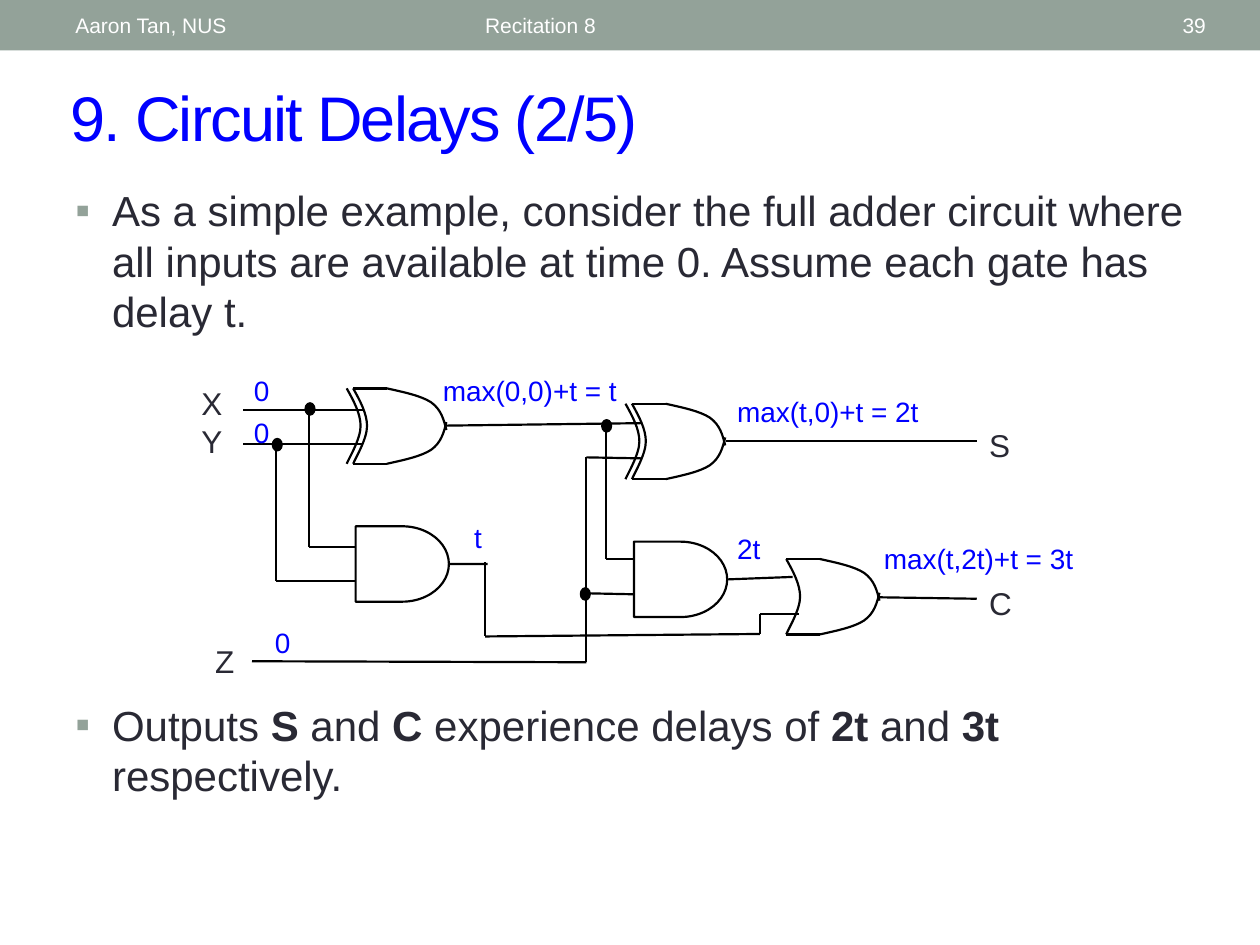
from dataclasses import dataclass
from itertools import pairwise

import pptx
import pptx.enum.shapes
import pptx.enum.text
import pptx.oxml
import pptx.oxml.ns
import pptx.util
from pptx.dml.color import RGBColor
from pptx.util import Cm

SHAPE = pptx.enum.shapes.MSO_SHAPE
ALIGN = pptx.enum.text.PP_ALIGN
ANCHOR = pptx.enum.text.MSO_ANCHOR
NS = pptx.oxml.ns.nsdecls("a")
COLORS = {"bar": "93A299", "white": "FFFFFF", "blue": "0000FF", "text": "292934", "ink": "000000"}
LINE_WIDTH = pptx.util.Pt(1.25)
GATE_W, GATE_H = 1.88, 1.52

Point = tuple[float, float]


@dataclass
class Label:
    text: str
    x: float
    y: float
    w: float
    h: float = 0.97
    size: float = 16
    color: str = "blue"
    align: ALIGN = ALIGN.LEFT
    anchor: ANCHOR = ANCHOR.TOP


@dataclass
class OrGate:
    x: float
    y: float
    exclusive: bool = False


def rgb(name: str) -> RGBColor:
    return RGBColor.from_string(COLORS[name])


def add_label(s, label: Label):
    """Add a text box; text between asterisks is bold."""
    sp = s.shapes.add_textbox(Cm(label.x), Cm(label.y), Cm(label.w), Cm(label.h))
    tf = sp.text_frame
    tf.word_wrap = True
    tf.vertical_anchor = label.anchor
    fmt = {"name": "Arial", "size": pptx.util.Pt(label.size)}
    for i, line in enumerate(label.text.split("\n")):
        p = tf.paragraphs[0] if i == 0 else tf.add_paragraph()
        p.alignment = label.align
        for j, part in enumerate(line.split("*")):
            r = p.add_run()
            r.text = part
            for key, value in (fmt | {"bold": j % 2 == 1}).items():
                setattr(r.font, key, value)
            r.font.color.rgb = rgb(label.color)
    return sp


def add_bullet(s, text: str, y: float, h: float) -> None:
    sp = add_label(s, Label(text, 1.27, y, 22.86, h, 24, "text"))
    p = sp.text_frame.paragraphs[0]
    p.space_before = pptx.util.Pt(4.8)
    pPr = p._p.get_or_add_pPr()
    pPr.set("marL", str(Cm(0.74)))
    pPr.set("indent", str(-Cm(0.74)))
    for xml in (
        f'<a:buClr {NS}><a:srgbClr val="{COLORS["bar"]}"/></a:buClr>',
        f'<a:buFont {NS} typeface="Arial"/>',
        f'<a:buChar {NS} char="▪"/>',
    ):
        pPr.append(pptx.oxml.parse_xml(xml))


def add_line(s, start: Point, end: Point):
    cx = s.shapes.add_connector(
        pptx.enum.shapes.MSO_CONNECTOR.STRAIGHT, *(Cm(v) for v in (*start, *end)))
    cx.line.color.rgb = rgb("ink")
    cx.line.width = LINE_WIDTH
    cx._element.spPr.append(pptx.oxml.parse_xml(f"<a:effectLst {NS}/>"))
    return cx


def add_wire(s, points: list[Point]) -> None:
    for start, end in pairwise(points):
        add_line(s, start, end)


def add_preset(s, kind: SHAPE, x: float, y: float, w: float, h: float,
               fill: str | None = None, line: str | None = None):
    sp = s.shapes.add_shape(kind, Cm(x), Cm(y), Cm(w), Cm(h))
    sp.shadow.inherit = False
    if fill:
        sp.fill.solid()
        sp.fill.fore_color.rgb = rgb(fill)
    else:
        sp.fill.background()
    if line:
        sp.line.color.rgb = rgb(line)
        sp.line.width = LINE_WIDTH
    else:
        sp.line.fill.background()
    return sp


# Each curve is a start point, then two control points and an end point per segment.
BACK = [(0, 0), (0.14, 0.25), (0.28, 0.51), (0.28, 0.76),
        (0.28, 1.02), (0.05, 1.4), (0, GATE_H)]
TOP = [(0.68, 0), (1.04, 0.08), (1.37, 0.15), (1.57, 0.28),
       (1.78, 0.43), (1.83, 0.64), (GATE_W, 0.84)]
BOTTOM = [(x, GATE_H - y) for x, y in TOP]


def add_curve(s, points: list[Point], x: float, y: float) -> None:
    """Draw an open outline whose segments are cubic curves."""
    pts = [(Cm(x + px), Cm(y + py)) for px, py in points]
    fb = s.shapes.build_freeform(*pts[0])
    fb.add_line_segments(pts[3::3], close=False)
    sp = fb.convert_to_shape()
    for i, segment in enumerate(sp._element.xpath(".//a:lnTo")):
        nodes = "".join(f'<a:pt x="{px - sp.left}" y="{py - sp.top}"/>'
                        for px, py in pts[3 * i + 1:3 * i + 4])
        cubic = pptx.oxml.parse_xml(f"<a:cubicBezTo {NS}>{nodes}</a:cubicBezTo>")
        segment.getparent().replace(segment, cubic)
    sp.shadow.inherit = False
    sp.fill.background()
    sp.line.color.rgb = rgb("ink")
    sp.line.width = LINE_WIDTH


def add_or_gate(s, gate: OrGate) -> None:
    add_curve(s, BACK, gate.x, gate.y)
    for y in (gate.y, gate.y + GATE_H):
        add_line(s, (gate.x, y), (gate.x + 0.68, y))
    for curve in (TOP, BOTTOM):
        add_curve(s, curve, gate.x, gate.y)
    if gate.exclusive:
        add_curve(s, BACK, gate.x - 0.13, gate.y)


def add_and_gate(s, x: float, y: float, output: Point) -> None:
    sp = add_preset(s, SHAPE.FLOWCHART_DELAY, x, y, GATE_W, GATE_H, line="ink")
    add_line(s, (x + GATE_W, y + GATE_H / 2), output).begin_connect(sp, 3)


HEADER = {"y": 0.05, "h": 0.91, "size": 12, "color": "white", "anchor": ANCHOR.MIDDLE}
PORT = {"w": 1.07, "size": 18, "color": "text"}
HEADER_LABELS = [
    Label("Recitation 8", x=9.53, w=11.43, **HEADER),
    Label("39", x=22.15, w=2.41, align=ALIGN.RIGHT, **HEADER),
    Label("Aaron Tan, NUS", x=1.27, w=8.05, **HEADER),
]
CIRCUIT_LABELS = [
    Label("max(0,0)+t = t", 8.68, 7.41, 4.19),
    Label("t", 9.31, 10.36, 0.66),
    Label("X\nY", 3.81, 7.62, h=1.52, **PORT),
    Label("S", 19.69, 8.47, **PORT),
    Label("C", 19.69, 11.64, **PORT),
    Label("Z", 4.09, 12.81, **PORT),
    Label("0", 4.87, 8.26, 0.84),
    Label("0", 4.87, 7.41, 0.84),
    Label("0", 5.29, 12.49, 0.84),
    Label("max(t,0)+t = 2t", 14.61, 7.82, 4.45),
    Label("max(t,2t)+t = 3t", 17.57, 10.8, 4.45),
    Label("2t", 14.61, 10.59, 1.07),
]
WIRES = [
    [(4.9, 8.26), (7.32, 8.26)],
    [(4.9, 8.95), (7.32, 8.95)],
    [(6.23, 8.26), (6.23, 11.02), (7.17, 11.02)],
    [(5.56, 8.95), (5.56, 11.71), (7.17, 11.71)],
    [(8.99, 8.58), (12.93, 8.53)],
    [(12.22, 8.51), (12.22, 11.27), (12.78, 11.27)],
    [(5.08, 13.33), (11.82, 13.35), (11.82, 9.22), (12.93, 9.24)],
    [(11.82, 11.96), (12.78, 11.98)],
    [(9.78, 11.33), (9.78, 12.83), (15.32, 12.78), (15.32, 12.37), (16.1, 12.37)],
    [(14.63, 8.89), (19.69, 8.89)],
    [(17.68, 12.04), (19.69, 12.07)],
]
JUNCTIONS = [(5.5, 8.85), (6.16, 8.13), (11.71, 11.86), (12.14, 8.47)]
OR_GATES = [OrGate(7.12, 7.83, True), OrGate(12.74, 8.14, True), OrGate(15.85, 11.27)]


def main() -> None:
    prs = pptx.Presentation()
    prs.slide_width, prs.slide_height = Cm(25.4), Cm(19.05)
    s = prs.slides.add_slide(prs.slide_layouts[6])
    add_preset(s, SHAPE.RECTANGLE, 0, 0, 25.4, 1.02, fill="bar")
    title = add_label(s, Label("9. Circuit Delays (2/5)", 1.17, 1.45, 23.39, 1.78, 36,
                               anchor=ANCHOR.MIDDLE))
    title.text_frame.paragraphs[0].runs[0].font._element.set("spc", "-100")
    for label in HEADER_LABELS:
        add_label(s, label)
    add_bullet(s, "As a simple example, consider the full adder circuit where all inputs "
                  "are available at time 0. Assume each gate has delay t.", 3.6, 4.65)
    add_bullet(s, "Outputs *S* and *C* experience delays of *2t *and *3t* respectively.",
               13.97, 2.34)
    for wire in WIRES:
        add_wire(s, wire)
    add_and_gate(s, 7.17, 10.61, (9.83, 11.37))
    add_and_gate(s, 12.78, 10.92, (15.98, 11.63))
    for gate in OR_GATES:
        add_or_gate(s, gate)
    for x, y in JUNCTIONS:
        add_preset(s, SHAPE.OVAL, x, y, 0.18, 0.23, fill="ink", line="ink")
    for label in CIRCUIT_LABELS:
        add_label(s, label)
    prs.save("out.pptx")


if __name__ == "__main__":
    main()
